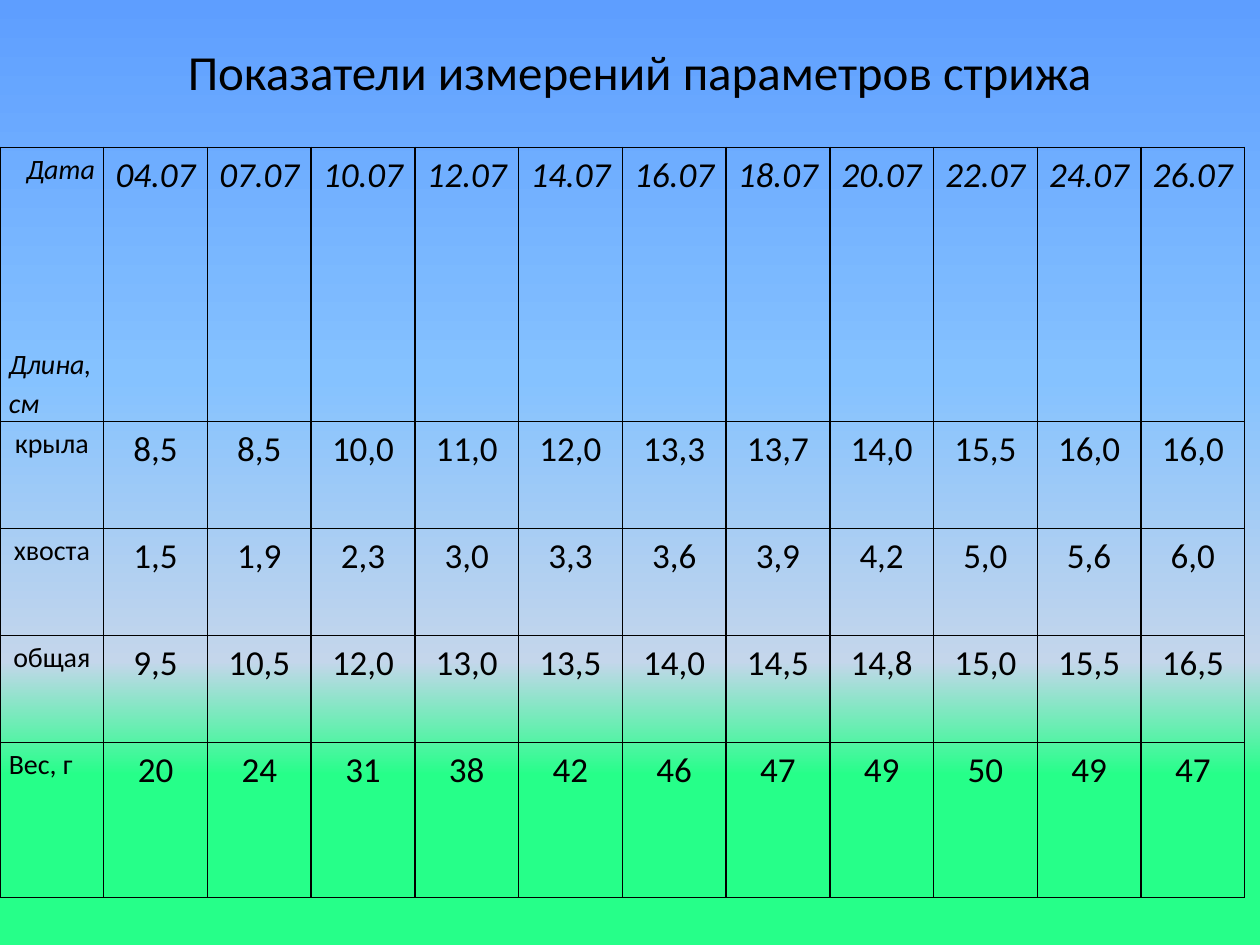
"""Builds a slide with a table of swift measurements."""
import pptx
import pptx.dml.color
import pptx.enum.text
import pptx.oxml
import pptx.oxml.ns
import pptx.util
from pptx.util import Inches, Pt

COLORS = {"text": "000000", "border": "000000", "sky": "5E9EFF",
          "light_sky": "85C2FF", "horizon": "C4D6EB", "grass": "26FF89"}
SKY_STOPS = [(0, "sky"), (40, "light_sky"), (70, "horizon"), (82, "grass")]
DATES = ["04.07", "07.07", "10.07", "12.07", "14.07", "16.07",
         "18.07", "20.07", "22.07", "24.07", "26.07"]
ROWS = [
    ["Дата\nДлина, см"] + DATES,
    ["крыла", "8,5", "8,5", "10,0", "11,0", "12,0", "13,3", "13,7", "14,0", "15,5", "16,0", "16,0"],
    ["хвоста", "1,5", "1,9", "2,3", "3,0", "3,3", "3,6", "3,9", "4,2", "5,0", "5,6", "6,0"],
    ["общая", "9,5", "10,5", "12,0", "13,0", "13,5", "14,0", "14,5", "14,8", "15,0", "15,5", "16,5"],
    ["Вес, г", "20", "24", "31", "38", "42", "46", "47", "49", "50", "49", "47"],
]
ROW_HEIGHTS = [2.15, 0.85, 0.85, 0.85, 1.23]
ALIGN = pptx.enum.text.PP_ALIGN


class SlideBuilder:
    """Holds the text style and the current slide."""

    font = "Calibri"

    def __init__(self, slide):
        self.s = slide

    def background(self, stops):
        fill = self.s.background.fill
        fill.gradient()
        fill.gradient_angle = 270
        gs_list = next(self.s.element.iter(pptx.oxml.ns.qn("a:gsLst")))
        for gs in list(gs_list):
            gs_list.remove(gs)
        for position, color in stops:
            gs_list.append(pptx.oxml.parse_xml(
                f'<a:gs {pptx.oxml.ns.nsdecls("a")} pos="{position * 1000}">'
                f'<a:srgbClr val="{COLORS[color]}"/></a:gs>'))

    def format(self, p, size, align, italic=False):
        p.alignment = align
        for r in p.runs:
            r.font.name = self.font
            r.font.size = Pt(size)
            r.font.italic = italic
            r.font.color.rgb = pptx.dml.color.RGBColor.from_string(COLORS["text"])

    def title(self, text, left, top, width, height):
        sp = self.s.shapes.title
        sp.left, sp.top, sp.width, sp.height = map(Inches, (left, top, width, height))
        tf = sp.text_frame
        tf.text = text
        tf.word_wrap = True
        self.format(tf.paragraphs[0], 28, ALIGN.CENTER)

    def border(self, cell):
        tc_pr = cell._tc.get_or_add_tcPr()
        for i, side in enumerate(("lnL", "lnR", "lnT", "lnB")):
            tc_pr.insert(i, pptx.oxml.parse_xml(
                f'<a:{side} {pptx.oxml.ns.nsdecls("a")} w="{Pt(1)}"><a:solidFill>'
                f'<a:srgbClr val="{COLORS["border"]}"/></a:solidFill></a:{side}>'))

    def cell(self, cell, text, size, align, italic):
        cell.fill.background()
        cell.margin_left = cell.margin_right = Inches(0.07)
        cell.margin_top = cell.margin_bottom = 0
        self.border(cell)
        cell.text_frame.text = text
        for p in cell.text_frame.paragraphs:
            p.line_spacing = 1.15
            self.format(p, size, align, italic)

    def table(self, rows, heights, left, top, width):
        frame = self.s.shapes.add_table(len(rows), len(rows[0]), Inches(left), Inches(top),
                                        Inches(width), Inches(sum(heights)))
        table = frame.table
        table.first_row = table.horz_banding = False
        for row, height in zip(table.rows, heights):
            row.height = Inches(height)
        last = len(rows) - 1
        for i, row in enumerate(rows):
            for j, text in enumerate(row):
                align = ALIGN.LEFT if j == 0 and i in (0, last) else ALIGN.CENTER
                self.cell(table.cell(i, j), text, 20 if j else 16, align, i == 0)
        date, length = table.cell(0, 0).text_frame.paragraphs
        date.alignment = ALIGN.RIGHT
        length.space_before = Pt(89)


def main():
    prs = pptx.Presentation()
    prs.slide_width, prs.slide_height = Inches(10), Inches(7.5)
    builder = SlideBuilder(prs.slides.add_slide(prs.slide_layouts[5]))
    builder.background(SKY_STOPS)
    builder.title("Показатели измерений параметров стрижа", 0.43, 0.28, 9.29, 0.57)
    builder.table(ROWS, ROW_HEIGHTS, 0, 1.17, 9.88)
    prs.save("out.pptx")


if __name__ == "__main__":
    main()
